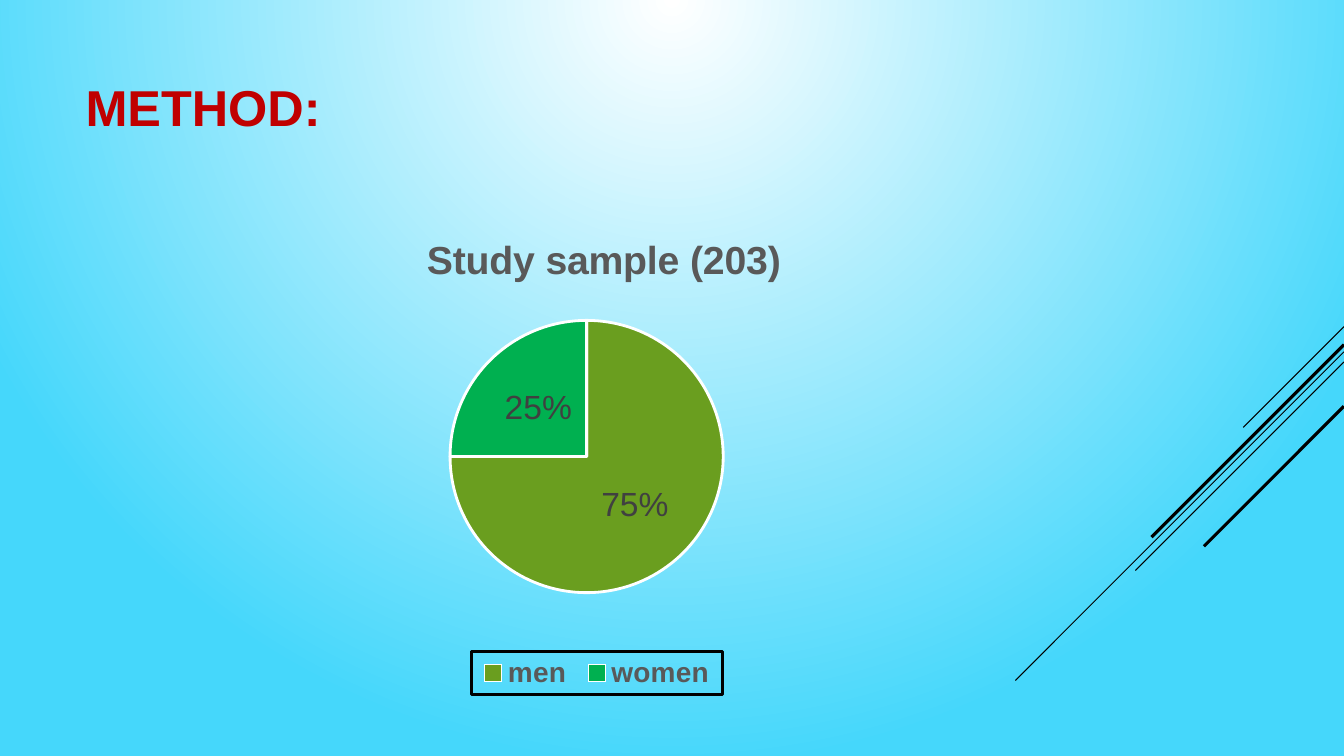
from lxml import etree
from pptx import Presentation
from pptx import util as u
from pptx.chart.data import CategoryChartData
from pptx.dml.color import RGBColor
from pptx.enum import chart as charts, shapes, text
from pptx.oxml import parse_xml
from pptx.oxml.ns import nsdecls, qn

Pt = u.Pt
COLORS = {
    "white": "FFFFFF", "sky": "45D7FB", "black": "000000", "red": "C00000",
    "men": "6A9E1F", "women": "00B050", "gray": "595959", "label": "404040",
}


def rgb(name):
    return RGBColor.from_string(COLORS[name])


def set_font(font, size, color, bold=False, name="Arial"):
    font.name, font.size, font.bold = name, Pt(size), bold
    font.color.rgb = rgb(color)


def write(frame, words, **style):
    """Put words in the frame's first paragraph and format them."""
    run = frame.paragraphs[0].add_run()
    run.text = words
    set_font(run.font, **style)


def place(part, inner=False, **fractions):
    """Fix a chart part at fractions of the chart's size."""
    for old in part.findall(qn("c:layout")):
        part.remove(old)
    settings = '<c:layoutTarget val="inner"/>' if inner else ""
    settings += "".join(f'<c:{k}Mode val="edge"/>' for k in "xy")
    settings += "".join(f'<c:{k} val="{v}"/>' for k, v in fractions.items())
    layout = parse_xml(f'<c:layout {nsdecls("c")}><c:manualLayout>{settings}'
                       '</c:manualLayout></c:layout>')
    leading = [c for c in part if c.tag in (qn("c:tx"), qn("c:legendPos"))]
    part.insert(len(leading), layout)


class SlideBuilder:
    def __init__(self, slide):
        self.slide = slide

    def background(self, center, edge):
        fill = self.slide.background.fill
        fill.gradient()
        for stop, color in zip(fill.gradient_stops, (center, edge)):
            stop.color.rgb = rgb(color)
        gradient = self.slide.element.find(".//" + qn("a:gradFill"))
        for linear in gradient.findall(qn("a:lin")):
            gradient.remove(linear)
        gradient.find(qn("a:gsLst")).addnext(parse_xml(
            f'<a:path {nsdecls("a")} path="circle">'
            '<a:fillToRect l="0" t="0" r="0" b="100000"/></a:path>'))

    def line(self, x1, y1, x2, y2, width):
        line = self.slide.shapes.add_connector(
            shapes.MSO_CONNECTOR.STRAIGHT, Pt(x1), Pt(y1), Pt(x2), Pt(y2))
        line.line.color.rgb = rgb("black")
        line.line.width = Pt(width)
        etree.SubElement(line._element.spPr, qn("a:effectLst"))

    def text(self, words, left, top, width, height, **style):
        box = self.slide.shapes.add_textbox(Pt(left), Pt(top), Pt(width), Pt(height))
        box.text_frame.word_wrap = True
        box.text_frame.vertical_anchor = text.MSO_ANCHOR.MIDDLE
        write(box.text_frame, words, **style)

    def pie(self, title, shares, left, top, width, height):
        data = CategoryChartData(number_format='0"%"')
        data.categories = list(shares)
        data.add_series("Series 1", list(shares.values()))
        chart = self.slide.shapes.add_chart(
            charts.XL_CHART_TYPE.PIE, Pt(left), Pt(top), Pt(width), Pt(height), data).chart
        set_font(chart.font, 10, "black", name="League Spartan")

        # Title
        chart.has_title = True
        write(chart.chart_title.text_frame, title, size=28, color="gray", bold=True)
        place(chart.element.find(".//" + qn("c:title")), x=0.33, y=0.04)

        # Slices and their labels
        plot = chart.plots[0]
        plot.vary_by_categories = True
        for index, group in enumerate(shares):
            look = plot.series[0].points[index].format
            look.fill.solid()
            look.fill.fore_color.rgb = rgb(group)
            look.line.color.rgb = rgb("white")
            look.line.width = Pt(2)
        plot.has_data_labels = True
        labels = plot.data_labels
        labels.show_value = True
        labels.number_format, labels.number_format_is_linked = '0"%"', False
        labels.position = charts.XL_LABEL_POSITION.CENTER
        set_font(labels.font, 24, "label")
        place(chart.element.find(".//" + qn("c:plotArea")), inner=True,
              x=0.07, y=0.23, w=0.84, h=0.56)

        # Framed legend
        chart.has_legend = True
        chart.legend.position = charts.XL_LEGEND_POSITION.BOTTOM
        chart.legend.include_in_layout = False
        set_font(chart.legend.font, 20, "gray", bold=True)
        legend = chart.element.find(".//" + qn("c:legend"))
        place(legend, x=0.38, y=0.91, w=0.24, h=0.09)
        legend.find(qn("c:overlay")).addnext(parse_xml(
            f'<c:spPr {nsdecls("c", "a")}><a:noFill/><a:ln w="{Pt(2.25)}"><a:solidFill>'
            f'<a:srgbClr val="{COLORS["black"]}"/></a:solidFill></a:ln></c:spPr>'))


def main():
    deck = Presentation()
    deck.slide_width, deck.slide_height = Pt(960), Pt(540)
    page = SlideBuilder(deck.slides.add_slide(deck.slide_layouts[6]))
    page.background("white", "sky")

    # Diagonal rays from the right edge: start height, run, width
    for start, run, width in ((233.3, 72, 0.75), (251.3, 234.7, 0.75), (258.5, 149, 0.75),
                              (246.2, 137.5, 2.25), (290.2, 100, 2.25)):
        page.line(960, start, 960 - run, start + run, width)

    # Heading and study sample
    page.text("METHOD:", 54, 16.5, 672, 119, size=36, color="red", bold=True)
    page.pie("Study sample (203)", {"men": 75, "women": 25}, 54, 149, 745, 348.5)
    deck.save("out.pptx")


if __name__ == "__main__":
    main()
